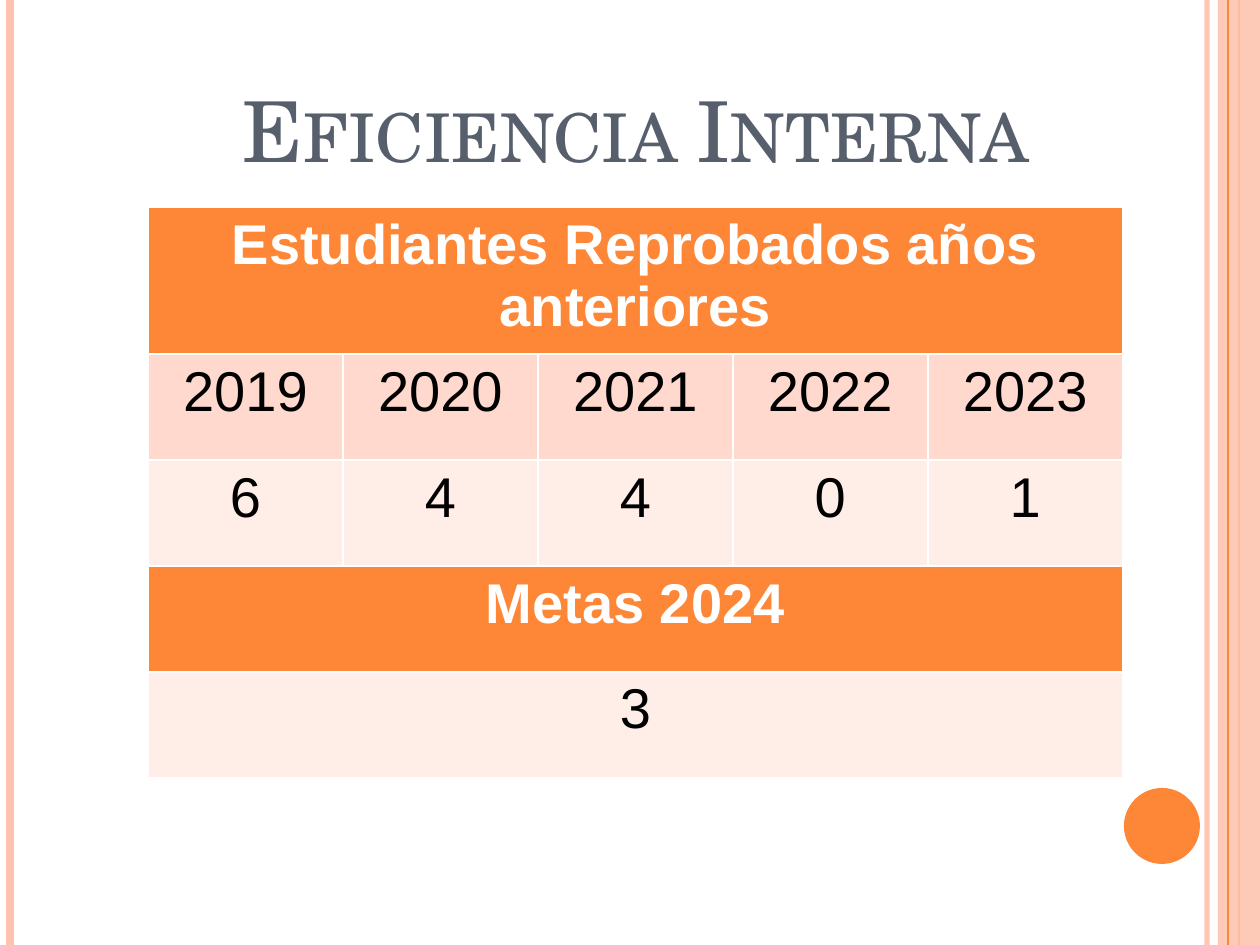
from lxml import etree
from pptx import Presentation
from pptx import util as u
from pptx.dml.color import RGBColor
from pptx.enum import shapes, text
from pptx.oxml import ns

PX = 914400 / 126
ORANGE = RGBColor(0xFE, 0x86, 0x37)
PEACH = RGBColor(0xFE, 0xC3, 0xAE)
PINK = RGBColor(0xFF, 0xD9, 0xCE)
BLUSH = RGBColor(0xFF, 0xED, 0xE8)
SLATE = RGBColor(0x57, 0x5F, 0x6D)
WHITE = RGBColor(0xFF, 0xFF, 0xFF)
BLACK = RGBColor(0, 0, 0)


def px(*lengths):
    return [u.Emu(round(length * PX)) for length in lengths]


def set_alpha(color_parent, percent):
    color = next(color_parent.iter(ns.qn("a:srgbClr")))
    etree.SubElement(color, ns.qn("a:alpha")).set("val", str(percent * 1000))


prs = Presentation()
prs.slide_width, prs.slide_height = px(1260, 945)
slide = prs.slides.add_slide(prs.slide_layouts[5])

stripes = [
    (1207, PEACH, 3, 93),
    (10, PEACH, 4.5, 100),
    (1239, ORANGE, 1.5, 100),
    (1228, ORANGE, 0.75, 100),
]
for x, color, width, opacity in stripes:
    stripe = slide.shapes.add_connector(
        shapes.MSO_CONNECTOR.STRAIGHT, *px(x, 0, x, 945))
    stripe.line.color.rgb = color
    stripe.line.width = u.Pt(width)
    properties = stripe._element.spPr
    etree.SubElement(properties, ns.qn("a:effectLst"))
    if opacity < 100:
        set_alpha(properties, opacity)
    if x == 1239:
        band = slide.shapes.add_shape(
            shapes.MSO_SHAPE.RECTANGLE, *px(1218, 0, 42, 945))
        band.shadow.inherit = False
        band.fill.solid()
        band.fill.fore_color.rgb = PEACH
        set_alpha(band._element.spPr, 87)
        band.line.fill.background()

dot = slide.shapes.add_shape(shapes.MSO_SHAPE.OVAL, *px(1124, 788, 76, 76))
dot.shadow.inherit = False
dot.fill.solid()
dot.fill.fore_color.rgb = ORANGE
dot.line.fill.background()

title = slide.shapes.title
title.left, title.top, title.width, title.height = px(69, 29, 1134, 157)
title.text_frame.vertical_anchor = text.MSO_ANCHOR.BOTTOM
heading = title.text_frame.paragraphs[0]
heading.alignment = text.PP_ALIGN.CENTER
run = heading.add_run()
run.text = "Eficiencia Interna"
run.font.size = u.Pt(48)
run.font.name = "TeX Gyre Schola"
run.font.color.rgb = SLATE
run._r.get_or_add_rPr().set("cap", "small")

rows = [
    (147, ORANGE, WHITE, ["Estudiantes Reprobados años anteriores"]),
    (106, PINK, BLACK, ["2019", "2020", "2021", "2022", "2023"]),
    (106, BLUSH, BLACK, ["6", "4", "4", "0", "1"]),
    (106, ORANGE, WHITE, ["Metas 2024"]),
    (106, BLUSH, BLACK, ["3"]),
]
failures = slide.shapes.add_table(
    len(rows), 5, *px(148, 207, 975, sum(row[0] for row in rows))).table
for column in failures.columns:
    column.width = px(195)[0]
for r, (height, fill, ink, values) in enumerate(rows):
    failures.rows[r].height = px(height)[0]
    if len(values) == 1:
        failures.cell(r, 0).merge(failures.cell(r, 4))
    for c, value in enumerate(values):
        cell = failures.cell(r, c)
        cell.fill.solid()
        cell.fill.fore_color.rgb = fill
        entry = cell.text_frame.paragraphs[0]
        entry.alignment = text.PP_ALIGN.CENTER
        run = entry.add_run()
        run.text = value
        run.font.size = u.Pt(32)
        run.font.name = "Arial"
        run.font.bold = ink == WHITE
        run.font.color.rgb = ink

prs.save("out.pptx")
